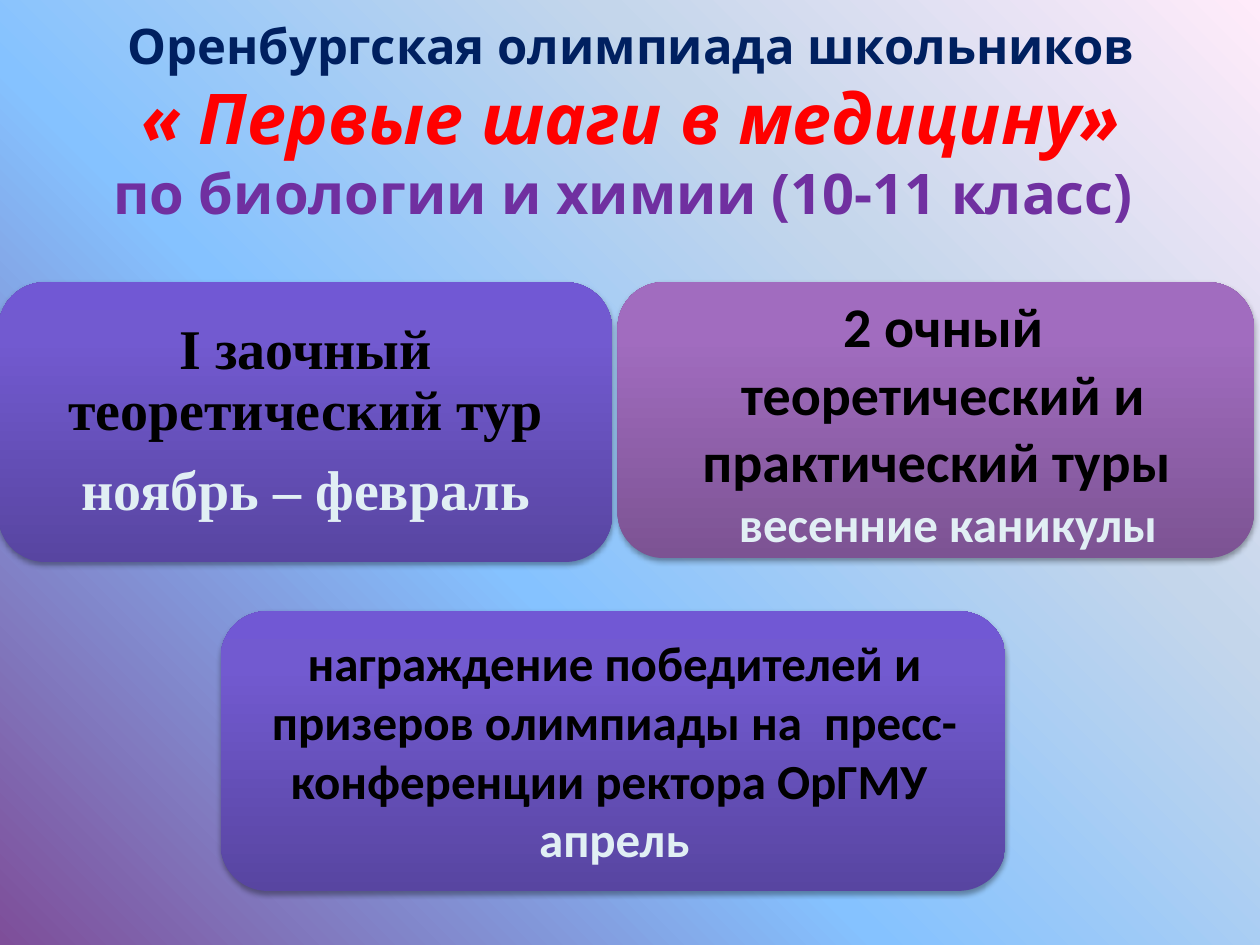
from lxml import etree
from pptx import Presentation
from pptx.dml.color import RGBColor
from pptx.enum.shapes import MSO_SHAPE
from pptx.enum.text import MSO_ANCHOR, MSO_AUTO_SIZE, PP_ALIGN
from pptx.oxml.ns import qn
from pptx.util import Cm, Pt

ROUND = MSO_SHAPE.ROUNDED_RECTANGLE
CENTER = PP_ALIGN.CENTER
MIDDLE, TOP = MSO_ANCHOR.MIDDLE, MSO_ANCHOR.TOP
GROW, FIXED = MSO_AUTO_SIZE.SHAPE_TO_FIT_TEXT, MSO_AUTO_SIZE.NONE

COLORS = {
    "navy": "002060", "red": "FF0000", "purple": "7030A0",
    "black": "000000", "pale": "E1EFF4",
}
SKY = [(0, "7E4E99"), (40, "85C2FF"), (70, "C4D6EB"), (100, "FFEBFA")]
VIOLET = [(0, "5845A1"), (80, "725AD0"), (100, "7158D4")]
MAUVE = [(0, "7C5393"), (80, "A16CBF"), (100, "A26BC1")]


def add_run(para, text, font="Calibri", size=28, color="black", italic=False):
    """Add one bold run in the given format."""
    run = para.add_run()
    run.text = text
    style = run.font
    style.name, style.size = font, Pt(size)
    style.bold, style.italic = True, italic
    style.color.rgb = RGBColor.from_string(COLORS[color])


def add_color(parent, value):
    return etree.SubElement(parent, qn("a:srgbClr"), val=value)


class Deck:
    def __init__(self):
        self.prs = Presentation()
        self.prs.slide_width, self.prs.slide_height = Cm(25.4), Cm(19.05)
        self.slide = self.prs.slides.add_slide(self.prs.slide_layouts[6])

    def blend(self, fill, owner, stops, angle):
        """Fill with a gradient of any number of stops."""
        fill.gradient()
        fill.gradient_angle = angle
        items = owner.element.find(".//" + qn("a:gsLst"))
        for old in list(items):
            items.remove(old)
        for place, value in stops:
            stop = etree.SubElement(items, qn("a:gs"), pos=str(place * 1000))
            add_color(stop, value)

    def backdrop(self, stops):
        self.blend(self.slide.background.fill, self.slide, stops, 45)

    def panel(self, box, stops):
        """Rounded panel with a soft shadow below."""
        shape = self.slide.shapes.add_shape(ROUND, *map(Cm, box))
        self.blend(shape.fill, shape, stops, 90)
        shape.line.fill.background()
        shape.shadow.inherit = False
        effects = shape.element.spPr.find(qn("a:effectLst"))
        shade = etree.SubElement(
            effects, qn("a:outerShdw"), blurRad=str(Pt(3.1)),
            dist=str(Pt(1.8)), dir="5400000", rotWithShape="0")
        etree.SubElement(add_color(shade, COLORS["black"]),
                         qn("a:alpha"), val="35000")

    def text(self, box, paras, anchor=MIDDLE, inset=(0.25, 0.13),
             lead=None, after=None, size=FIXED):
        """Centred text; each paragraph is a list of runs, None is a break."""
        frame = self.slide.shapes.add_textbox(*map(Cm, box)).text_frame
        frame.word_wrap, frame.auto_size = True, size
        frame.vertical_anchor = anchor
        frame.margin_left = frame.margin_right = Cm(inset[0])
        frame.margin_top = frame.margin_bottom = Cm(inset[1])
        for i, runs in enumerate(paras):
            para = frame.add_paragraph() if i else frame.paragraphs[0]
            para.alignment = CENTER
            if lead:
                para.line_spacing = lead
            if after:
                para.space_after = Pt(after)
            for run in runs:
                if run is None:
                    para.add_line_break()
                else:
                    words, form = run
                    add_run(para, words, **form)


def main():
    deck = Deck()
    deck.backdrop(SKY)

    # Title
    sans = {"font": "Noto Sans"}
    deck.text((0.41, 0.33, 24.61, 4.19), [[
        ("Оренбургская олимпиада школьников", dict(sans, color="navy")),
        None,
        ("« Первые шаги в медицину»",
         dict(sans, size=40, color="red", italic=True)),
        None,
        ("по биологии и химии (10-11 класс) ",
         dict(sans, size=32, color="purple")),
    ]])

    # Awards
    deck.panel((4.45, 12.32, 15.82, 5.64), VIOLET)
    deck.text((4.88, 12.62, 15.01, 5.05), [
        [("награждение победителей и призеров олимпиады на  "
          "пресс-конференции ректора ОрГМУ ", {})],
        [("апрель", {"color": "pale"})],
    ], anchor=TOP, size=GROW)

    # Second round
    deck.panel((12.45, 5.69, 12.83, 5.56), MAUVE)
    deck.text((12.93, 5.69, 12.17, 5.64), [
        [("2 очный теоретический и практический туры ", {"size": 32})],
        [(" ", {"size": 24}), ("весенние каникулы", {"color": "pale"})],
    ], inset=(0.38, 0.38))

    # First round
    serif = {"font": "Times New Roman", "size": 32}
    deck.panel((-0.03, 5.69, 12.37, 5.64), VIOLET)
    deck.text((0.3, 6.27, 11.73, 4.47), [
        [("Ι заочный теоретический тур", serif)],
        [("ноябрь – февраль", dict(serif, color="pale"))],
    ], inset=(0.33, 0.33), lead=0.9, after=11)

    deck.prs.save("out.pptx")


if __name__ == "__main__":
    main()
